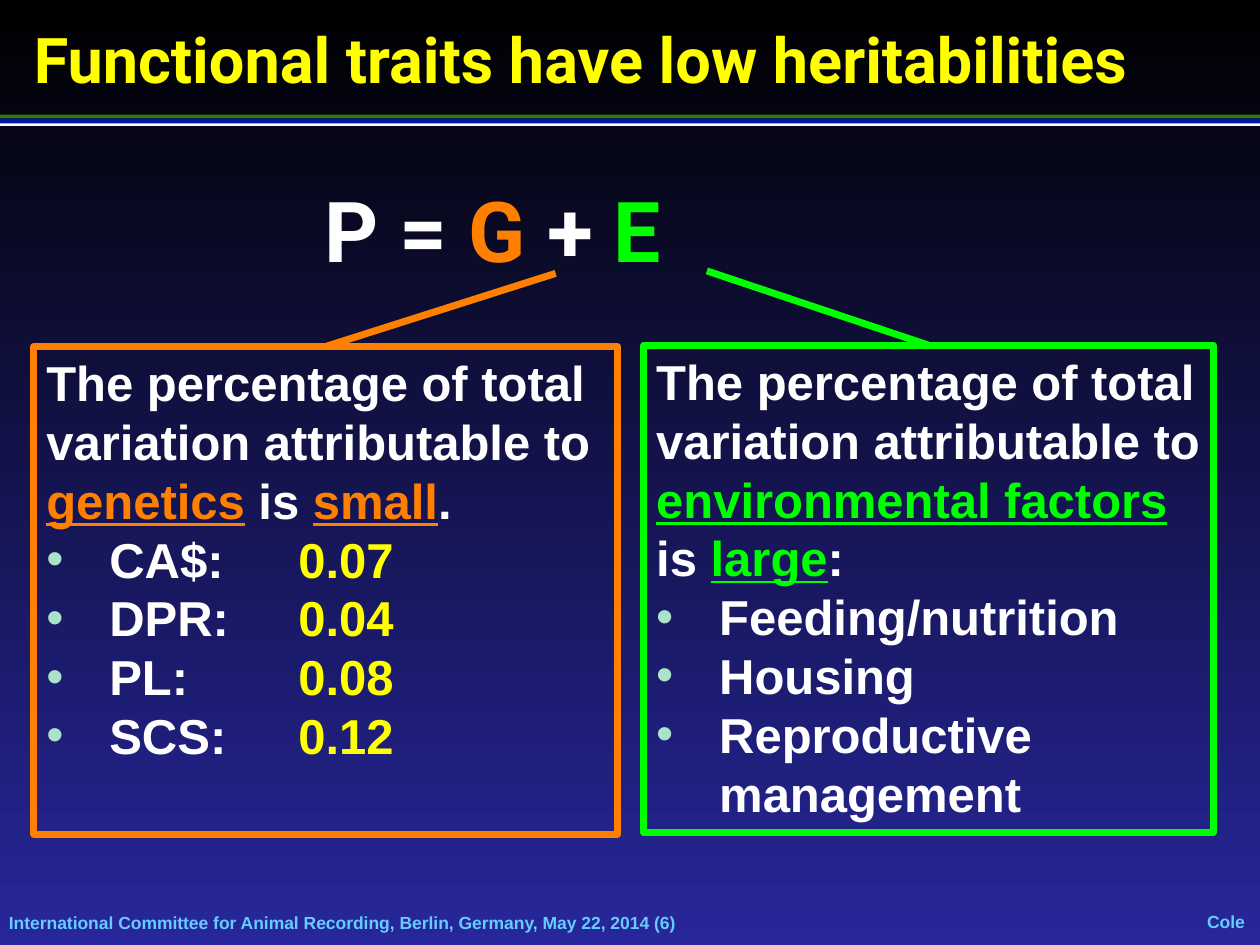
from dataclasses import dataclass

from lxml import etree
from pptx import Presentation
from pptx.dml.color import RGBColor
from pptx.enum.shapes import MSO_CONNECTOR, MSO_SHAPE
from pptx.enum.text import MSO_ANCHOR, PP_ALIGN
from pptx.oxml.ns import qn
from pptx.util import Inches, Pt

RECT = MSO_SHAPE.RECTANGLE
STRAIGHT = MSO_CONNECTOR.STRAIGHT
LEFT, CENTER = PP_ALIGN.LEFT, PP_ALIGN.CENTER
TOP, MIDDLE = MSO_ANCHOR.TOP, MSO_ANCHOR.MIDDLE
BOX_TOP_SIDE = 0


@dataclass(frozen=True)
class Theme:
    bg_top: str = "000000"
    bg_bottom: str = "27279B"
    text: str = "FFFFFF"
    accent: str = "FFFF00"
    genetics: str = "FF8000"
    environment: str = "00FF00"
    bullet: str = "AAE2CA"
    footer: str = "66CCFF"
    rule_green: str = "2A7E00"
    rule_blue: str = "001799"
    heading_font: str = "Roboto"
    body_font: str = "Arial"
    title_size: int = 36
    formula_size: int = 48
    body_size: int = 28
    footer_size: int = 10
    line_width: int = 4


T = Theme()

# A paragraph is a list of runs: (text, colour, underlined)
TITLE = [[("Functional traits have low heritabilities", T.accent, False)]]
FORMULA = [[("P = ", T.text, False), ("G", T.genetics, False),
            (" + ", T.text, False), ("E", T.environment, False)]]
INTRO = "The percentage of total variation attributable to "
HERITABILITIES = [("CA$: \t", "0.07"), ("DPR: \t", "0.04"),
                  ("PL:\t\t", "0.08"), ("SCS: \t", "0.12")]
FACTORS = ["Feeding/nutrition", "Housing", "Reproductive management"]

PANELS = [
    dict(color=T.genetics, box=(0.27, 2.75, 4.63, 3.87), start=(4.41, 2.17),
         intro=("genetics", " is ", "small", "."),
         items=[[(label, T.text, False), (value, T.accent, False)]
                for label, value in HERITABILITIES]),
    dict(color=T.environment, box=(5.11, 2.74, 4.52, 3.87), start=(5.61, 2.15),
         intro=("environmental factors ", "is ", "large", ":"),
         items=[[(name, T.text, False)] for name in FACTORS]),
]

FOOTERS = [
    ("International Committee for Animal Recording, Berlin, Germany, May 22, 2014 (6)",
     (0.07, 7.24, 8.09, 0.17), LEFT, True),
    ("Cole", (9.58, 7.23, 0.3, 0.17), CENTER, False),
]
RULES = [(0.91, 0.03, T.rule_green), (0.97, 0.03, T.text), (0.94, 0.04, T.rule_blue)]


def rgb(value):
    return RGBColor.from_string(value)


def inches(values):
    return [Inches(v) for v in values]


def indent(p, left, first=0):
    pPr = p._p.get_or_add_pPr()
    pPr.set("marL", str(Inches(left)))
    pPr.set("indent", str(Inches(first)))
    return pPr


def add_bullet(p):
    pPr = indent(p, 0.5, -0.5)
    color = etree.SubElement(pPr, qn("a:buClr"))
    etree.SubElement(color, qn("a:srgbClr"), val=T.bullet)
    etree.SubElement(pPr, qn("a:buFont"), typeface=T.body_font)
    etree.SubElement(pPr, qn("a:buChar"), char="•")


def write(s, paragraphs, *, size, font=T.body_font, align=LEFT, anchor=TOP,
          margins=(0.1, 0.05), wrap=True, before=0, after=0, left=0, bullets_from=None):
    """Fill a shape with paragraphs; those from index bullets_from on get bullets."""
    tf = s.text_frame
    tf.word_wrap = wrap
    tf.vertical_anchor = anchor
    tf.margin_left = tf.margin_right = Inches(margins[0])
    tf.margin_top = tf.margin_bottom = Inches(margins[1])
    for i, runs in enumerate(paragraphs):
        p = tf.add_paragraph() if i else tf.paragraphs[0]
        p.alignment = align
        p.space_before, p.space_after = Pt(before), Pt(after)
        if bullets_from is not None and i >= bullets_from:
            add_bullet(p)
        elif left:
            indent(p, left)
        for text, color, underlined in runs:
            r = p.add_run()
            r.text = text
            r.font.name, r.font.size, r.font.bold = font, Pt(size), True
            r.font.underline = underlined
            r.font.color.rgb = rgb(color)


def style_line(line, color):
    line.color.rgb = rgb(color)
    line.width = Pt(T.line_width)


def add_panel(shapes, panel):
    color = panel["color"]
    s = shapes.add_shape(RECT, *inches(panel["box"]))
    s.shadow.inherit = False
    s.fill.background()
    style_line(s.line, color)
    etree.SubElement(s.line._get_or_add_ln(), qn("a:round"))
    topic, link, amount, stop = panel["intro"]
    intro = [(INTRO, T.text, False), (topic, color, True), (link, T.text, False),
             (amount, color, True), (stop, T.text, False)]
    write(s, [intro] + panel["items"], size=T.body_size, bullets_from=1)

    start = inches(panel["start"])
    c = shapes.add_connector(STRAIGHT, *start, *start)
    c.end_connect(s, BOX_TOP_SIDE)
    style_line(c.line, color)
    etree.SubElement(c._element.spPr, qn("a:effectLst"))


def set_background(slide):
    fill = slide.background.fill
    fill.gradient()
    fill.gradient_angle = 270
    for stop, position, color in zip(fill.gradient_stops, (0, 1), (T.bg_top, T.bg_bottom)):
        stop.position = position
        stop.color.rgb = rgb(color)


def main():
    prs = Presentation()
    prs.slide_width, prs.slide_height = Inches(10), Inches(7.5)
    slide = prs.slides.add_slide(prs.slide_layouts[6])
    shapes = slide.shapes
    set_background(slide)

    for text, box, align, wrap in FOOTERS:
        write(shapes.add_textbox(*inches(box)), [[(text, T.footer, False)]],
              size=T.footer_size, align=align, anchor=MIDDLE, margins=(0, 0),
              wrap=wrap, before=6.2)

    for top, height, color in RULES:
        s = shapes.add_shape(RECT, *inches((0, top, 10, height)))
        s.shadow.inherit = False
        s.fill.solid()
        s.fill.fore_color.rgb = rgb(color)
        s.line.fill.background()

    write(shapes.add_textbox(*inches((0.17, 0.11, 9.66, 0.7))), TITLE,
          size=T.title_size, font=T.heading_font, anchor=MIDDLE)
    write(shapes.add_textbox(*inches((0.5, 1.37, 8.92, 0.94))), FORMULA,
          size=T.formula_size, font=T.heading_font, before=15.9, after=14.4, left=1.98)

    for panel in PANELS:
        add_panel(shapes, panel)

    prs.save("out.pptx")


if __name__ == "__main__":
    main()
